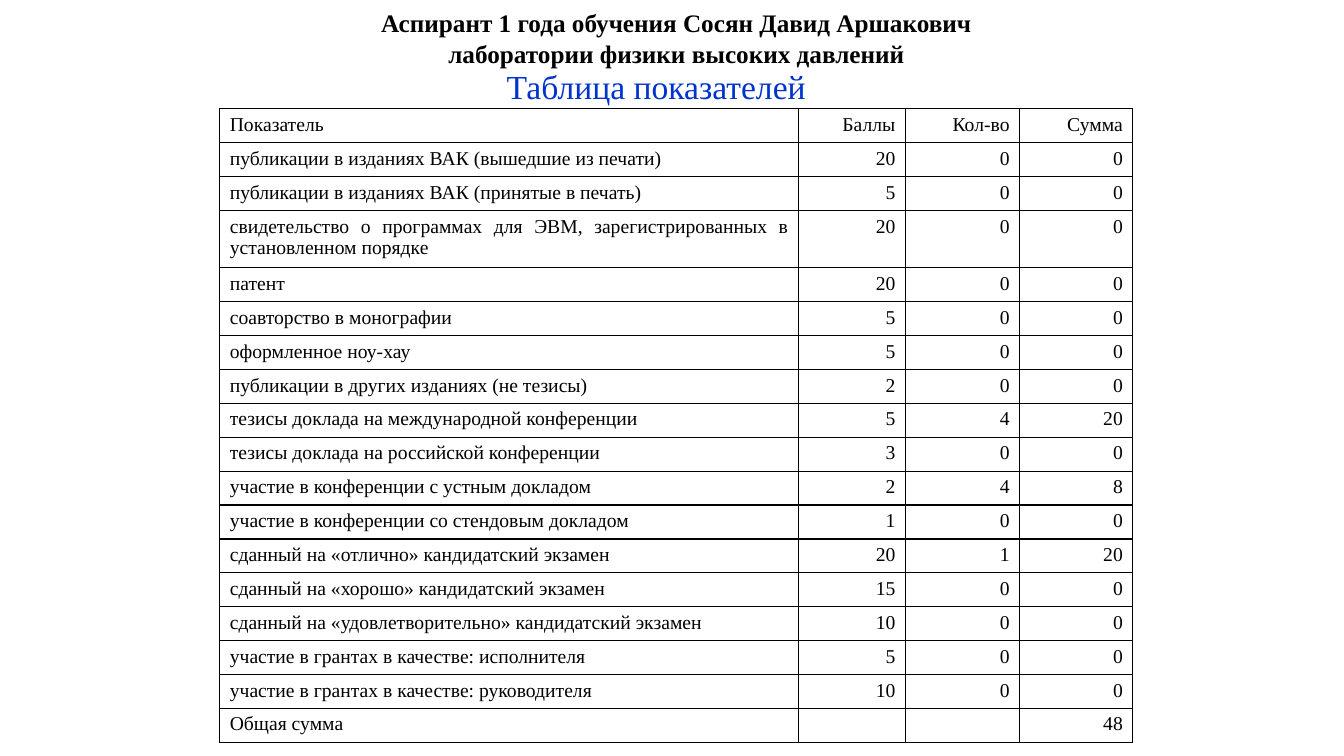
from copy import deepcopy

from lxml import etree
from pptx import Presentation
from pptx.dml.color import RGBColor
from pptx.enum.text import MSO_ANCHOR, MSO_AUTO_SIZE, PP_ALIGN
from pptx.oxml.ns import qn
from pptx.util import Inches, Pt

CENTER, RIGHT, JUSTIFY = PP_ALIGN.CENTER, PP_ALIGN.RIGHT, PP_ALIGN.JUSTIFY
TOP, MIDDLE = MSO_ANCHOR.TOP, MSO_ANCHOR.MIDDLE
FIXED_SIZE = MSO_AUTO_SIZE.NONE

SLIDE_W, SLIDE_H = Inches(13.33), Inches(7.5)
FONT = "Times New Roman"
COLORS = {"text": "000000", "caption": "0033CC", "border": "000000"}
BORDER_WIDTH = Pt(1)

# Left, top, width, height in percent of the slide
TITLE_BOX = (18.45, 0.27, 63.75, 9.47)
CAPTION_BOX = (22.58, 8, 52.5, 6.27)
TABLE_BOX = (16.35, 14.4, 67.95, 83.87)

# Column widths in percent of the table; the two-line row relative to the others
COLUMN_SHARES = (63.4, 11.7, 12.5, 12.4)
TALL_ROW, TALL_WEIGHT = 3, 1.69

TITLE = "Аспирант 1 года обучения Сосян Давид Аршакович\nлаборатории физики высоких давлений"
CAPTION = "Таблица показателей"
HEADINGS = ("Показатель", "Баллы", "Кол-во", "Сумма")

# Indicator, points, count
INDICATORS = [
    ("публикации в изданиях ВАК (вышедшие из печати)", 20, 0),
    ("публикации в изданиях ВАК (принятые в печать)", 5, 0),
    ("свидетельство о программах для ЭВМ, зарегистрированных в установленном порядке", 20, 0),
    ("патент", 20, 0),
    ("соавторство в монографии", 5, 0),
    ("оформленное ноу-хау", 5, 0),
    ("публикации в других изданиях (не тезисы)", 2, 0),
    ("тезисы доклада на международной конференции", 5, 4),
    ("тезисы доклада на российской конференции", 3, 0),
    ("участие в конференции с устным докладом", 2, 4),
    ("участие в конференции со стендовым докладом", 1, 0),
    ("сданный на «отлично» кандидатский экзамен", 20, 1),
    ("сданный на «хорошо» кандидатский экзамен", 15, 0),
    ("сданный на «удовлетворительно» кандидатский экзамен", 10, 0),
    ("участие в грантах в качестве: исполнителя", 5, 0),
    ("участие в грантах в качестве: руководителя", 10, 0),
]


def to_lengths(box):
    """Turn percentages of the slide into lengths."""
    return [int(size * share / 100)
            for size, share in zip((SLIDE_W, SLIDE_H) * 2, box)]


def write(paragraph, text, size, color, align, bold=False):
    paragraph.text = text
    paragraph.alignment = align
    for run in paragraph.runs:
        run.font.name = FONT
        run.font.size = Pt(size)
        run.font.bold = bold
        run.font.color.rgb = RGBColor.from_string(COLORS[color])
    # Line breaks take the format of the text around them
    for line_break in paragraph._p.findall(qn("a:br")):
        line_break.append(deepcopy(paragraph.runs[0]._r.rPr))
    if not text:
        etree.SubElement(paragraph._p, qn("a:endParaRPr"), sz=str(size * 100))


def set_frame(frame, anchor, inset):
    frame.word_wrap = True
    frame.auto_size = FIXED_SIZE
    frame.vertical_anchor = anchor
    frame.margin_left = frame.margin_right = Inches(inset)
    frame.margin_top = frame.margin_bottom = Inches(0.05)


def add_title(slide):
    title = slide.shapes.title
    title.left, title.top, title.width, title.height = to_lengths(TITLE_BOX)
    set_frame(title.text_frame, MIDDLE, 0.05)
    write(title.text_frame.paragraphs[0], TITLE, 18, "text", CENTER, bold=True)


def add_caption(slide):
    caption = slide.shapes.add_textbox(*to_lengths(CAPTION_BOX))
    set_frame(caption.text_frame, TOP, 0.1)
    paragraph = caption.text_frame.paragraphs[0]
    write(paragraph, CAPTION, 24, "caption", CENTER)
    paragraph.space_before = Pt(3)


def add_borders(cell):
    properties = cell._tc.get_or_add_tcPr()
    for side in ("lnL", "lnR", "lnT", "lnB"):
        line = etree.SubElement(properties, qn(f"a:{side}"), w=str(BORDER_WIDTH))
        fill = etree.SubElement(line, qn("a:solidFill"))
        etree.SubElement(fill, qn("a:srgbClr"), val=COLORS["border"])


def score_rows():
    """Headings, each indicator with its sum, and the total."""
    scored = [(name, points, count, points * count)
              for name, points, count in INDICATORS]
    total = sum(row[-1] for row in scored)
    return [HEADINGS, *scored, ("Общая сумма", "", "", total)]


def add_score_table(slide):
    rows = score_rows()
    left, top, width, height = to_lengths(TABLE_BOX)
    table = slide.shapes.add_table(
        len(rows), len(HEADINGS), left, top, width, height).table
    table.first_row = table.horz_banding = False

    # Column widths and row heights
    for column, share in zip(table.columns, COLUMN_SHARES):
        column.width = int(width * share / 100)
    row_height = height / (len(rows) - 1 + TALL_WEIGHT)
    for index, row in enumerate(table.rows):
        row.height = int(row_height * (TALL_WEIGHT if index == TALL_ROW else 1))

    # Cells
    for r, values in enumerate(rows):
        for c, value in enumerate(values):
            cell = table.cell(r, c)
            add_borders(cell)
            cell.fill.background()
            write(cell.text_frame.paragraphs[0], str(value), 14, "text",
                  RIGHT if c else JUSTIFY)


def main():
    presentation = Presentation()
    presentation.slide_width, presentation.slide_height = SLIDE_W, SLIDE_H
    slide = presentation.slides.add_slide(presentation.slide_layouts[5])
    add_title(slide)
    add_caption(slide)
    add_score_table(slide)
    presentation.save("out.pptx")


if __name__ == "__main__":
    main()
